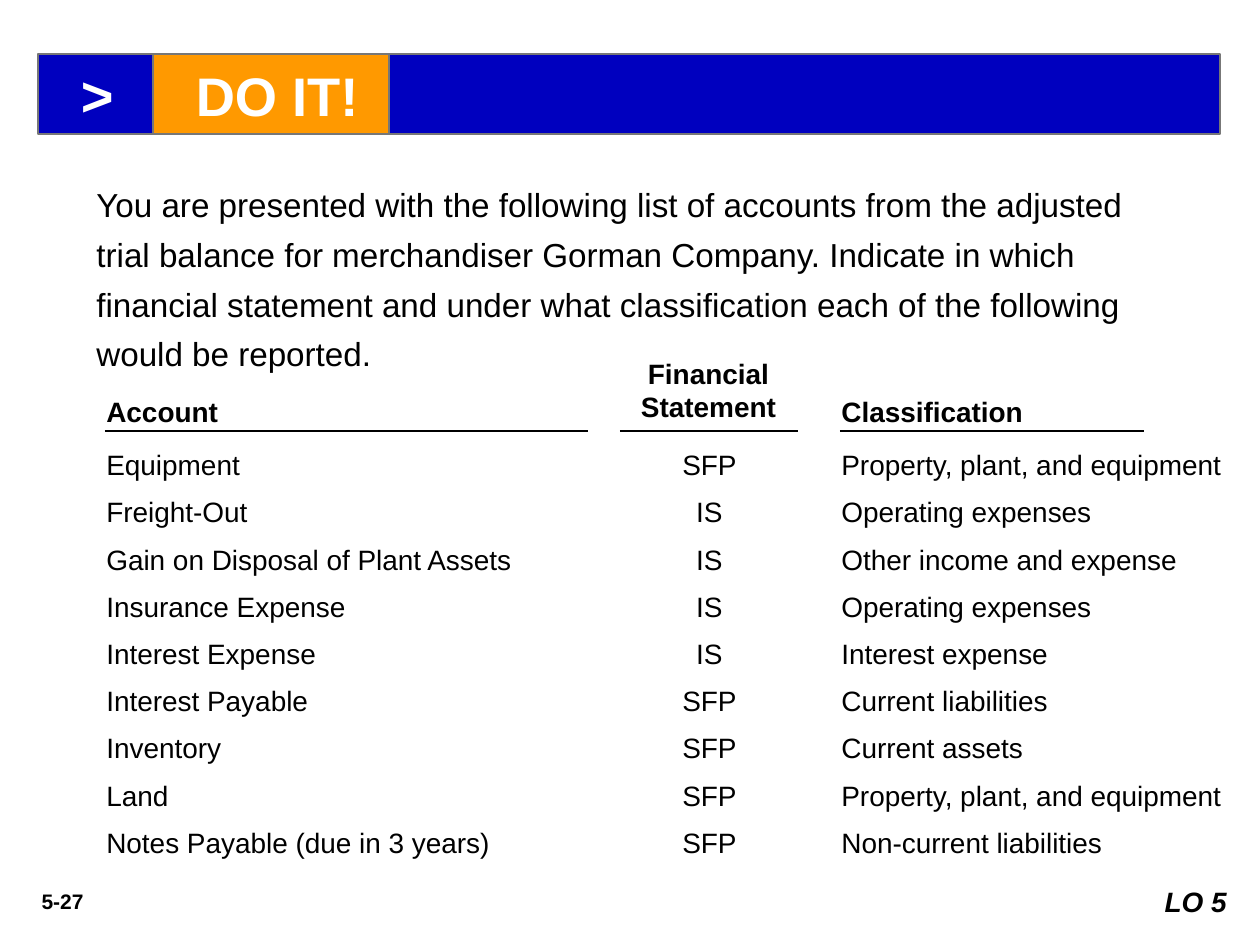
from dataclasses import dataclass

from lxml import etree
from pptx import Presentation
from pptx import util as u
from pptx.dml.color import RGBColor
from pptx.enum import shapes, text
from pptx.oxml.ns import qn

PX = u.Inches(1) / 126
FONT = "Arial"
COLORS = {
    "ink": "000000",
    "paper": "FFFFFF",
    "blue": "0000BF",
    "orange": "FF9900",
    "edge": "777777",
}
LEFT, CENTER, RIGHT = text.PP_ALIGN.LEFT, text.PP_ALIGN.CENTER, text.PP_ALIGN.RIGHT


@dataclass
class Box:
    left: int
    top: int
    width: int
    height: int


@dataclass
class Style:
    size: int = 16
    bold: bool = False
    italic: bool = False
    color: str = "ink"
    align: text.PP_ALIGN = LEFT
    line_spacing: float = 1.0


@dataclass
class Column:
    heading: str
    heading_box: Box
    rule_left: int
    rule_right: int
    left: int
    width: int
    align: text.PP_ALIGN
    entries: list[str]


def emu(px: int) -> int:
    return round(px * PX)


def place(box: Box) -> tuple[int, ...]:
    return tuple(emu(v) for v in (box.left, box.top, box.width, box.height))


def rgb(name: str) -> RGBColor:
    return RGBColor.from_string(COLORS[name])


def write(shape, words: str, style: Style) -> None:
    frame = shape.text_frame
    frame.text = words
    frame.word_wrap = True
    paragraph = frame.paragraphs[0]
    paragraph.alignment = style.align
    paragraph.line_spacing = style.line_spacing
    font = paragraph.runs[0].font
    font.name, font.size = FONT, u.Pt(style.size)
    font.bold, font.italic = style.bold, style.italic
    font.color.rgb = rgb(style.color)


def add_label(slide, box: Box, words: str, style: Style) -> None:
    label = slide.shapes.add_textbox(*place(box))
    write(label, words, style)
    label.text_frame.auto_size = text.MSO_AUTO_SIZE.SHAPE_TO_FIT_TEXT


def add_panel(slide, box: Box, fill: str, words: str, style: Style):
    panel = slide.shapes.add_shape(shapes.MSO_SHAPE.RECTANGLE, *place(box))
    panel.shadow.inherit = False
    panel.fill.solid()
    panel.fill.fore_color.rgb = rgb(fill)
    panel.line.fill.background()
    write(panel, words, style)
    panel.text_frame.vertical_anchor = text.MSO_ANCHOR.TOP
    return panel


def add_banner(slide, box: Box, fill: str, words: str, size: int,
               anchor: text.MSO_ANCHOR) -> None:
    banner = add_panel(slide, box, fill, words, Style(size, bold=True, color="paper"))
    banner.line.color.rgb = rgb("edge")
    banner.line.width = u.Pt(1)
    frame = banner.text_frame
    frame.vertical_anchor = anchor
    frame.margin_left = frame.margin_right = u.Inches(0.09)
    properties = frame.paragraphs[0]._p.get_or_add_pPr()
    properties.set("marL", str(u.Inches(0.25)))
    properties.set("indent", "0")


def add_rule(slide, left: int, right: int, y: int) -> None:
    rule = slide.shapes.add_connector(
        shapes.MSO_CONNECTOR.STRAIGHT, emu(left), emu(y), emu(right), emu(y))
    rule.line.color.rgb = rgb("ink")
    rule.line.width = u.Pt(1.5)
    etree.SubElement(rule._element.spPr, qn("a:effectLst"))


def add_column(slide, column: Column) -> None:
    heading_style = Style(bold=True, align=column.align)
    add_label(slide, column.heading_box, column.heading, heading_style)
    add_rule(slide, column.rule_left, column.rule_right, RULE_Y)
    for row, entry in enumerate(column.entries):
        top = round(FIRST_ROW + row * ROW_PITCH)
        add_label(slide, Box(column.left, top, column.width, ROW_HEIGHT),
                  entry, Style(align=column.align))


RULE_Y = 431
FIRST_ROW, ROW_PITCH, ROW_HEIGHT = 441, 47.25, 47

QUESTION = (
    "You are presented with the following list of accounts from the adjusted "
    "trial balance for merchandiser Gorman Company. Indicate in which financial "
    "statement and under what classification each of the following would be reported."
)

COLUMNS = [
    Column("Account", Box(94, 388, 431, 47), 105, 588, 94, 514, LEFT, [
        "Equipment", "Freight-Out", "Gain on Disposal of Plant Assets",
        "Insurance Expense", "Interest Expense", "Interest Payable",
        "Inventory", "Land", "Notes Payable (due in 3 years)"]),
    Column("Financial Statement", Box(609, 350, 199, 81), 620, 798, 620, 179, CENTER, [
        "SFP", "IS", "IS", "IS", "IS", "SFP", "SFP", "SFP", "SFP"]),
    Column("Classification", Box(829, 388, 357, 47), 840, 1144, 829, 410, LEFT, [
        "Property, plant, and equipment", "Operating expenses",
        "Other income and expense", "Operating expenses", "Interest expense",
        "Current liabilities", "Current assets",
        "Property, plant, and equipment", "Non-current liabilities"]),
]


def main() -> None:
    deck = Presentation()
    deck.slide_width, deck.slide_height = emu(1260), emu(945)
    slide = deck.slides.add_slide(deck.slide_layouts[6])

    # Page number and question
    add_label(slide, Box(10, 882, 105, 38), "5-27",
              Style(12, bold=True, align=CENTER))
    add_panel(slide, Box(84, 168, 1103, 207), "paper", QUESTION,
              Style(19, line_spacing=1.25))

    # Accounts with their statement and classification
    for column in COLUMNS:
        add_column(slide, column)

    # Title banner
    add_banner(slide, Box(38, 54, 1182, 80), "blue", ">", 32, text.MSO_ANCHOR.MIDDLE)
    add_banner(slide, Box(153, 54, 236, 80), "orange", "DO IT!", 31,
               text.MSO_ANCHOR.BOTTOM)

    # Learning objective
    add_panel(slide, Box(1134, 878, 105, 47), "paper", "LO 5",
              Style(bold=True, italic=True, align=RIGHT))

    deck.save("out.pptx")


if __name__ == "__main__":
    main()
